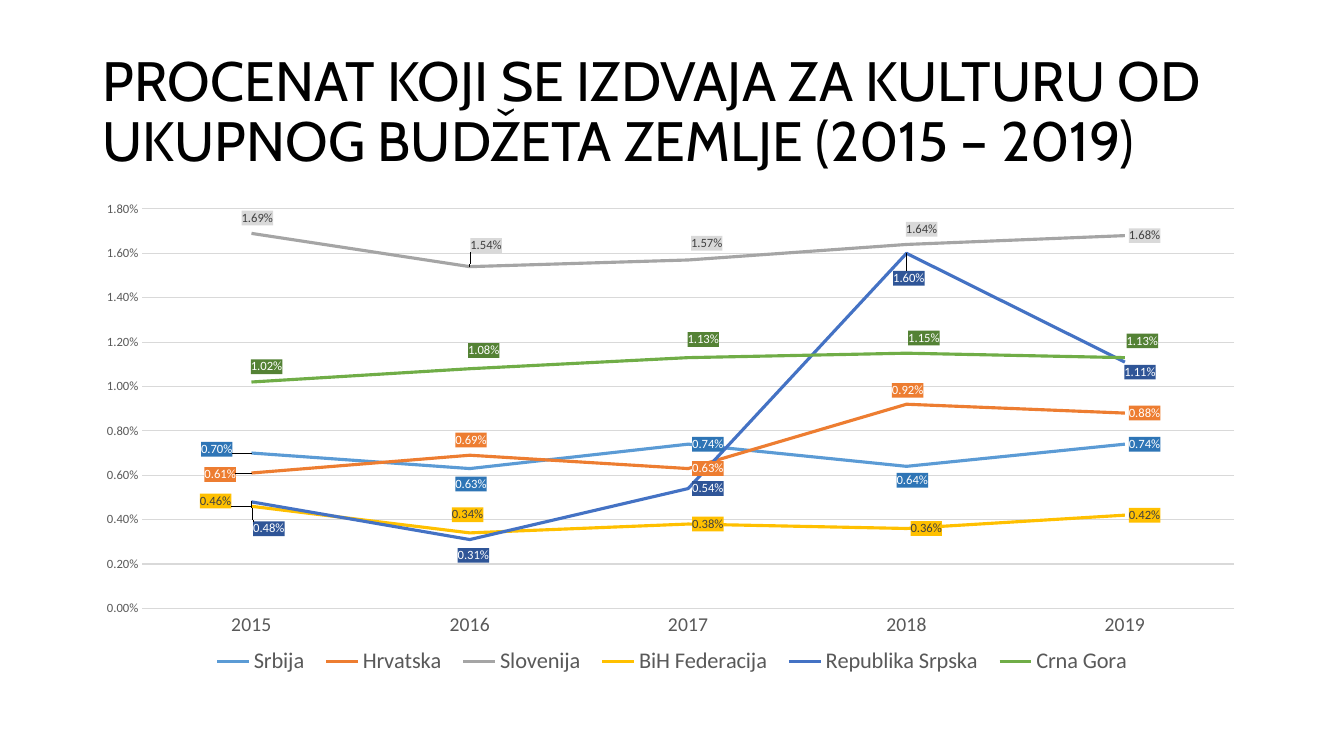
from dataclasses import dataclass

from pptx import Presentation
from pptx.chart.chart import Chart
from pptx.chart.data import CategoryChartData
from pptx.dml.color import RGBColor
from pptx.enum.chart import XL_CHART_TYPE, XL_LABEL_POSITION, XL_LEGEND_POSITION, XL_MARKER_STYLE, XL_TICK_MARK
from pptx.enum.text import MSO_ANCHOR, MSO_AUTO_SIZE, PP_ALIGN
from pptx.oxml import parse_xml
from pptx.oxml.ns import nsdecls
from pptx.util import Cm, Pt

LINE = XL_CHART_TYPE.LINE
BOTTOM = XL_LEGEND_POSITION.BOTTOM
RIGHT = XL_LABEL_POSITION.RIGHT
NO_MARKER = XL_MARKER_STYLE.NONE
NO_TICK = XL_TICK_MARK.NONE
MIDDLE = MSO_ANCHOR.MIDDLE
NO_AUTOFIT = MSO_AUTO_SIZE.NONE
LEFT = PP_ALIGN.LEFT

PERCENT = "0.00%"
GREY = "595959"
GRID = "D9D9D9"
WHITE = "FFFFFF"
DARK = "404040"
YEARS = ["2015", "2016", "2017", "2018", "2019"]
NO_LEADER_LINES = (
    f'<c:extLst {nsdecls("c")}><c:ext uri="{{CE6537A1-D6FC-4f65-9D91-7224C49458BB}}" '
    'xmlns:c15="http://schemas.microsoft.com/office/drawing/2012/chart">'
    '<c15:showLeaderLines val="0"/></c:ext></c:extLst>'
)


@dataclass
class Country:
    name: str
    percents: list[float]
    color: str
    label_fill: str
    label_color: str
    label_shifts: dict[int, tuple[float, float]]


COUNTRIES = [
    Country("Srbija", [0.70, 0.63, 0.74, 0.64, 0.74], "5B9BD5", "2E75B6", WHITE,
            {0: (-4.7, -0.8), 1: (-1.6, 3.2), 3: (-1.2, 2.9)}),
    Country("Hrvatska", [0.61, 0.69, 0.63, 0.92, 0.88], "ED7D31", "ED7D31", WHITE,
            {0: (-4.4, 0.3), 1: (-1.6, -3.2), 3: (-1.6, -2.9)}),
    Country("Slovenija", [1.69, 1.54, 1.57, 1.64, 1.68], "A5A5A5", "D9D9D9", DARK,
            {0: (-1.2, -3.2), 1: (-0.3, -4.4), 2: (-0.1, -3.5), 3: (-0.4, -3.2)}),
    Country("BiH Federacija", [0.46, 0.34, 0.38, 0.36, 0.42], "FFC000", "FFC000", DARK,
            {0: (-4.8, -1.1), 1: (-1.9, -3.8)}),
    Country("Republika Srpska", [0.48, 0.31, 0.54, 1.60, 1.11], "4472C4", "2F5597", WHITE,
            {0: (-0.2, 5.6), 1: (-1.4, 3.3), 3: (-1.5, 5.2), 4: (-0.4, 2.1)}),
    Country("Crna Gora", [1.02, 1.08, 1.13, 1.15, 1.13], "70AD47", "548235", WHITE,
            {0: (-0.4, -3.2), 1: (-0.5, -3.8), 2: (-0.4, -3.8), 3: (-0.2, -3.2), 4: (-0.2, -3.5)}),
]


def rgb(color: str) -> RGBColor:
    return RGBColor.from_string(color)


def set_font(font, size: float, color: str, name: str = "Calibri") -> None:
    font.size = Pt(size)
    font.name = name
    font.color.rgb = rgb(color)


def set_line(line, color: str, width: float) -> None:
    line.color.rgb = rgb(color)
    line.width = Pt(width)


def layout_xml(content: str):
    return parse_xml(f"<c:layout {nsdecls('c')}><c:manualLayout>{content}</c:manualLayout></c:layout>")


def box_xml(x: float, y: float, w: float, h: float, target: str = ""):
    modes = '<c:xMode val="edge"/><c:yMode val="edge"/>'
    sizes = "".join(f'<c:{k} val="{v / 100:.3f}"/>' for k, v in zip("xywh", (x, y, w, h)))
    return layout_xml(target + modes + sizes)


def fill_xml(color: str):
    return parse_xml(f'<c:spPr {nsdecls("c", "a")}><a:solidFill><a:srgbClr val="{color}"/></a:solidFill></c:spPr>')


def add_title(s, text: str) -> None:
    sp = s.shapes.title
    sp.left, sp.top, sp.width, sp.height = Cm(2.33), Cm(1.01), Cm(29.21), Cm(3.68)
    tf = sp.text_frame
    tf.text = text
    tf.word_wrap = True
    tf.auto_size = NO_AUTOFIT
    tf.vertical_anchor = MIDDLE
    p = tf.paragraphs[0]
    p.alignment = LEFT
    p.line_spacing = 0.9
    set_font(p.runs[0].font, 39.6, "000000", "Cabin")


def format_series(series, ser, country: Country) -> None:
    series.smooth = False
    series.marker.style = NO_MARKER
    set_line(series.format.line, country.color, 2.25)
    labels = series.data_labels
    labels.show_value = True
    labels.number_format = PERCENT
    labels.number_format_is_linked = False
    labels.position = RIGHT
    set_font(labels.font, 9, country.label_color)
    for i in country.label_shifts:
        label = series.points[i].data_label
        label.position = RIGHT
        set_font(label.font, 9, country.label_color)
    for dLbl, (dx, dy) in zip(ser.xpath("c:dLbls/c:dLbl"), country.label_shifts.values()):
        shift = f'<c:x val="{dx / 100:.3f}"/><c:y val="{dy / 100:.3f}"/>'
        dLbl.xpath("c:idx")[0].addnext(layout_xml(shift))
    for txPr in ser.xpath("c:dLbls//c:txPr"):
        for old in txPr.getparent().xpath("c:spPr"):
            old.getparent().remove(old)
        txPr.addprevious(fill_xml(country.label_fill))
    ser.xpath("c:dLbls")[0].append(parse_xml(NO_LEADER_LINES))


def format_axes(chart: Chart) -> None:
    cat, val = chart.category_axis, chart.value_axis
    for axis, size in ((cat, 14), (val, 9)):
        axis.major_tick_mark = axis.minor_tick_mark = NO_TICK
        set_font(axis.tick_labels.font, size, GREY)
    set_line(cat.format.line, GRID, 0.75)
    val.format.line.fill.background()
    val.minimum_scale, val.maximum_scale, val.major_unit = 0, 0.018, 0.002
    val.tick_labels.number_format = PERCENT
    val.tick_labels.number_format_is_linked = False
    val.has_major_gridlines = True
    set_line(val.major_gridlines.format.line, GRID, 0.75)


def place_parts(chart: Chart) -> None:
    for old in chart.element.xpath("c:chart/c:plotArea/c:layout | c:chart/c:legend/c:layout"):
        old.getparent().remove(old)
    plot_area = chart.element.xpath("c:chart/c:plotArea")[0]
    plot_area.insert(0, box_xml(4.25, 1.55, 94.2, 83.3, '<c:layoutTarget val="inner"/>'))
    legend_pos = chart.element.xpath("c:chart/c:legend/c:legendPos")[0]
    legend_pos.addnext(box_xml(9.5, 92, 81, 7.6))


def add_budget_chart(s) -> None:
    data = CategoryChartData(number_format=PERCENT)
    data.categories = YEARS
    for country in COUNTRIES:
        data.add_series(country.name, [round(v / 100, 4) for v in country.percents])
    chart = s.shapes.add_chart(LINE, Cm(2.33), Cm(5.08), Cm(29.21), Cm(12.09), data).chart
    chart.has_title = False
    set_font(chart.font, 10, "000000")
    chart.has_legend = True
    chart.legend.position = BOTTOM
    chart.legend.include_in_layout = False
    set_font(chart.legend.font, 16, GREY)
    plot = chart.plots[0]
    plot.vary_by_categories = False
    for series, ser, country in zip(plot.series, chart.element.xpath(".//c:ser"), COUNTRIES):
        format_series(series, ser, country)
    format_axes(chart)
    place_parts(chart)


def main() -> None:
    prs = Presentation()
    prs.slide_width, prs.slide_height = Cm(33.87), Cm(19.05)
    s = prs.slides.add_slide(prs.slide_layouts[5])
    add_title(s, "PROCENAT KOJI SE IZDVAJA ZA KULTURU OD UKUPNOG BUDŽETA ZEMLJE (2015 – 2019)")
    add_budget_chart(s)
    prs.save("out.pptx")


if __name__ == "__main__":
    main()
